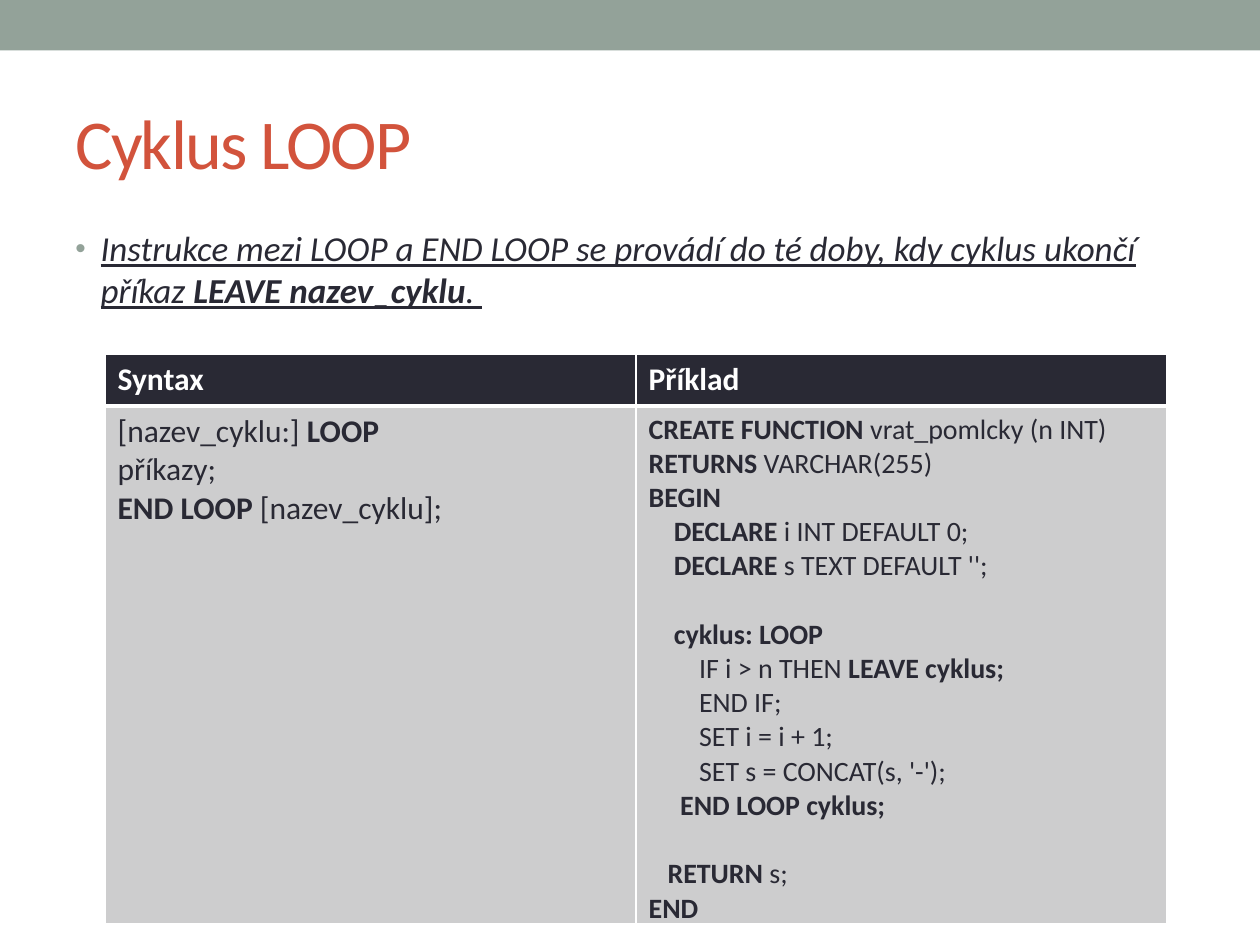
"""Build the slide on the LOOP cycle: title, rule and a syntax table."""
from dataclasses import dataclass

from lxml.etree import SubElement as Sub
from pptx import Presentation
from pptx.dml.color import RGBColor as RGB
from pptx.enum.shapes import MSO_SHAPE as Shape
from pptx.enum.text import MSO_ANCHOR as Anchor, PP_ALIGN as Align
from pptx.oxml.ns import qn
from pptx.util import Inches, Pt

COLS, ROWS = 120, 90
WIDTH, HEIGHT = Inches(10), Inches(7.5)


@dataclass(frozen=True)
class Theme:
    font: str = "Calibri"
    band: str = "93A299"
    title: str = "D2533C"
    ink: str = "292934"
    pale: str = "CDCDCE"
    white: str = "FFFFFF"
    head: int = 40
    body: int = 20
    cell: int = 18
    code: int = 16


@dataclass(frozen=True)
class Box:
    col: float
    row: float
    wide: float
    high: float

    def rect(self) -> tuple[int, int, int, int]:
        return (int(WIDTH * self.col / COLS), int(HEIGHT * self.row / ROWS),
                int(WIDTH * self.wide / COLS), int(HEIGHT * self.high / ROWS))


@dataclass(frozen=True)
class Line:
    text: str
    indent: float = 0
    gap: float = 0


@dataclass(frozen=True)
class Cell:
    lines: tuple[Line, ...]
    size: int
    ink: str
    fill: str
    top: int
    base: int


THEME = Theme()
BAND = Box(0, 0, COLS, 4.8)
TITLE = Box(6, 7, 108, 13)
BODY = Box(6, 21, 108, 64)
TABLE = Box(10, 33.75, 101.16, 54.12)
HEAD_ROW = 4.92
STEP, BLANK = 0.2, 19.5

RULE = ("Instrukce mezi LOOP a END LOOP se provádí do té doby, "
        "kdy cyklus ukončí příkaz *LEAVE nazev_cyklu*. ")
SYNTAX = (
    Line("[nazev_cyklu:] *LOOP*"),
    Line("příkazy;"),
    Line("*END LOOP* [nazev_cyklu];"),
)
CODE = (
    Line("*CREATE FUNCTION* vrat_pomlcky (n INT)"),
    Line("*RETURNS* VARCHAR(255)"),
    Line("*BEGIN*"),
    Line("*DECLARE* i INT DEFAULT 0;", 1),
    Line("*DECLARE* s TEXT DEFAULT '';", 1),
    Line("*cyklus: LOOP*", 1, BLANK),
    Line("IF i > n THEN *LEAVE cyklus;*", 2),
    Line("END IF;", 2),
    Line("SET i = i + 1;", 2),
    Line("SET s = CONCAT(s, '-');", 2),
    Line("*END LOOP cyklus;*", 1.25),
    Line("*RETURN* s;", 0.75, BLANK),
    Line("*END*"),
)


def head(text: str) -> Cell:
    return Cell((Line(f"*{text}*"),), THEME.cell, THEME.white, THEME.ink, 1, 3)


def body(lines: tuple[Line, ...], size: int) -> Cell:
    return Cell(lines, size, THEME.ink, THEME.pale, 3, 1)


GRID = (
    (head("Syntax"), head("Příklad")),
    (body(SYNTAX, THEME.cell), body(CODE, THEME.code)),
)


def write(para, text: str, size: int, ink: str) -> None:
    """Fill a paragraph, with bold between asterisks."""
    font = para.font
    font.name, font.size = THEME.font, Pt(size)
    font.color.rgb = RGB.from_string(ink)
    for num, part in enumerate(text.split("*")):
        if part:
            run = para.add_run()
            run.text = part
            run.font.bold = num % 2 == 1


def add_band(slide) -> None:
    band = slide.shapes.add_shape(Shape.RECTANGLE, *BAND.rect())
    band.shadow.inherit = False
    band.fill.solid()
    band.fill.fore_color.rgb = RGB.from_string(THEME.band)
    band.line.fill.background()


def add_title(slide) -> None:
    title = slide.shapes.title
    title.left, title.top, title.width, title.height = TITLE.rect()
    title.text_frame.vertical_anchor = Anchor.MIDDLE
    para = title.text_frame.paragraphs[0]
    para.alignment = Align.LEFT
    write(para, "Cyklus LOOP", THEME.head, THEME.title)
    para.runs[0].font._element.set("spc", "-100")


def add_rule(slide) -> None:
    frame = slide.shapes.add_textbox(*BODY.rect()).text_frame
    frame.word_wrap = True
    para = frame.paragraphs[0]
    para.space_before = Pt(4)
    props = para._p.get_or_add_pPr()
    props.set("marL", str(Inches(STEP)))
    props.set("indent", str(-Inches(STEP)))
    tint = Sub(Sub(props, qn("a:buClr")), qn("a:srgbClr"))
    tint.set("val", THEME.band)
    Sub(props, qn("a:buSzPct")).set("val", "85000")
    Sub(props, qn("a:buFont")).set("typeface", "Arial")
    Sub(props, qn("a:buChar")).set("char", "•")
    write(para, RULE, THEME.body, THEME.ink)
    para.font.italic = para.font.underline = True


def add_edges(cell, top: int, base: int) -> None:
    props = cell._tc.get_or_add_tcPr()
    for side, width in zip("LRTB", (1, 1, top, base)):
        edge = Sub(props, qn(f"a:ln{side}"))
        edge.set("w", str(Pt(width)))
        tint = Sub(Sub(edge, qn("a:solidFill")), qn("a:srgbClr"))
        tint.set("val", THEME.white)


def fill_cell(cell, data: Cell) -> None:
    add_edges(cell, data.top, data.base)
    cell.fill.solid()
    cell.fill.fore_color.rgb = RGB.from_string(data.fill)
    frame = cell.text_frame
    for num, line in enumerate(data.lines):
        para = frame.add_paragraph() if num else frame.paragraphs[0]
        if line.indent:
            left = Inches(STEP * line.indent)
            para._p.get_or_add_pPr().set("marL", str(left))
        if line.gap:
            para.space_before = Pt(line.gap)
        write(para, line.text, data.size, data.ink)


def add_grid(slide) -> None:
    rows, cols = len(GRID), len(GRID[0])
    table = slide.shapes.add_table(rows, cols, *TABLE.rect()).table
    table.horz_banding = False
    for row, high in zip(table.rows, (HEAD_ROW, TABLE.high - HEAD_ROW)):
        row.height = int(HEIGHT * high / ROWS)
    for row, items in zip(table.rows, GRID):
        for cell, data in zip(row.cells, items):
            fill_cell(cell, data)


def main() -> None:
    deck = Presentation()
    deck.slide_width, deck.slide_height = WIDTH, HEIGHT
    slide = deck.slides.add_slide(deck.slide_layouts[5])
    for draw in (add_band, add_title, add_rule, add_grid):
        draw(slide)
    deck.save("out.pptx")


if __name__ == "__main__":
    main()
